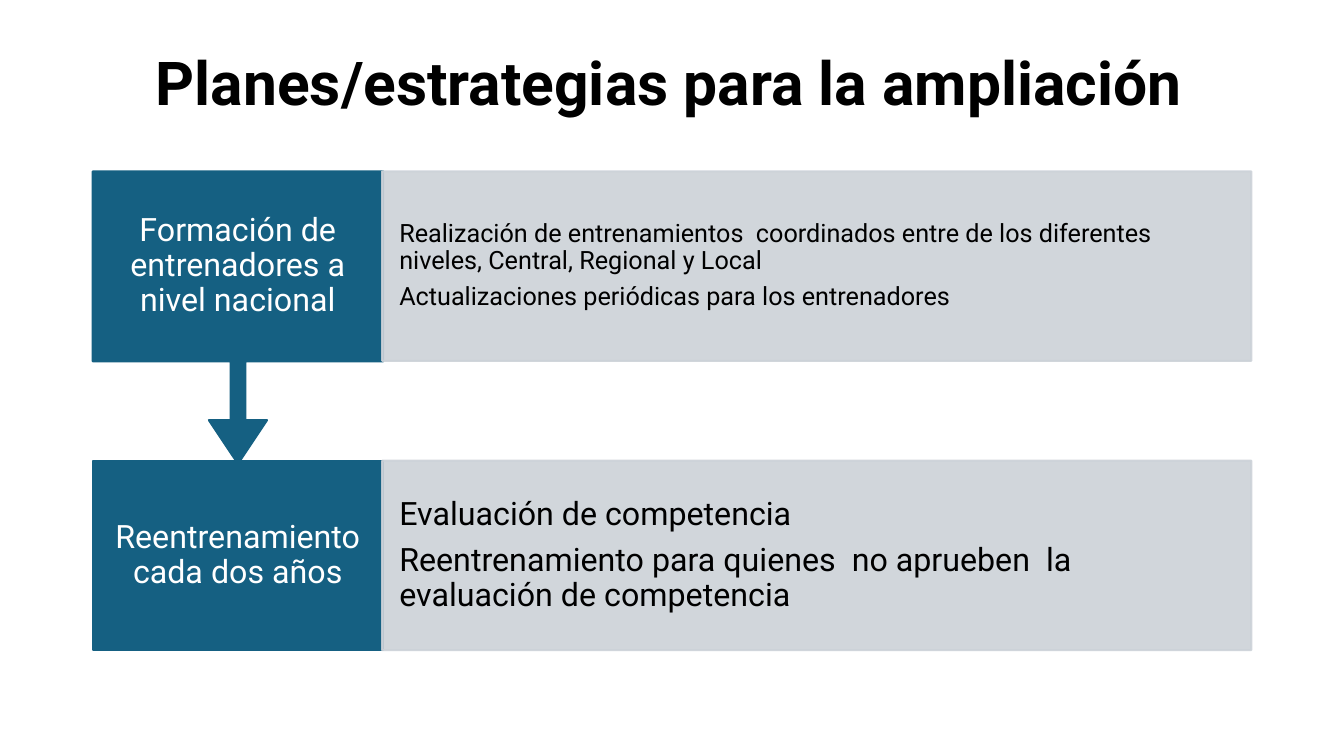
from lxml.etree import SubElement
from pptx import Presentation
from pptx.dml.color import RGBColor
from pptx.enum.shapes import MSO_SHAPE as Preset
from pptx.enum.text import MSO_ANCHOR as Anchor, PP_ALIGN as Align
from pptx.oxml.ns import qn
from pptx.util import Inches, Pt

BLUE, GREY, WHITE, BLACK = "156082", "CCD2D8", "FFFFFF", "000000"
LEFT, LABEL_WIDTH, PANEL_WIDTH = 0.92, 2.88, 8.62
PANEL_LEFT = 3.79
ROW_TOP, ROW_PITCH, ROW_HEIGHT = 1.7, 2.87, 1.88
CALLOUT_HEIGHT = 2.9


def paint(shape, color, opacity=100):
    """Give fill and outline one colour, with the same opacity."""
    shape.shadow.inherit = False
    shape.fill.solid()
    shape.line.width = Pt(1.5)
    for fill in (shape.fill, shape.line.fill):
        fill.solid()
        fill.fore_color.rgb = RGBColor.from_string(color)
    if opacity < 100:
        for tint in shape._element.spPr.iter(qn("a:srgbClr")):
            SubElement(tint, qn("a:alpha"), val=str(opacity * 1000))


def write(shape, lines, size, color, align, inset, bold=False, after=0.35):
    """Fill a shape with paragraphs; space after is a share of the size."""
    frame = shape.text_frame
    frame.word_wrap = True
    frame.vertical_anchor = Anchor.MIDDLE
    frame.margin_left = frame.margin_right = Inches(inset[0])
    frame.margin_top = frame.margin_bottom = Inches(inset[1])
    frame.text = "\n".join(lines)
    for para in frame.paragraphs:
        para.alignment = align
        para.line_spacing = 0.9
        para.space_before = Pt(0)
        para.space_after = Pt(round(size * after, 1))
        for span in para.runs:
            span.font.name = "Roboto"
            span.font.size = Pt(size)
            span.font.bold = bold
            span.font.color.rgb = RGBColor.from_string(color)


deck = Presentation()
deck.slide_width, deck.slide_height = Inches(13.33), Inches(7.5)
page = deck.slides.add_slide(deck.slide_layouts[6])
shapes = page.shapes

# Title
title = shapes.add_textbox(Inches(0.81), Inches(0.23), Inches(11.5), Inches(1.24))
write(title, [" Planes/estrategias para la ampliación"], 43.2, BLACK,
      Align.CENTER, (0.1, 0.05), bold=True, after=0)

# Steps: label, details, size of the details, inset of the details
steps = [
    ("Formación de entrenadores a nivel nacional",
     ["Realización de entrenamientos  coordinados entre de los diferentes "
      "niveles, Central, Regional y Local",
      "Actualizaciones periódicas para los entrenadores"],
     18, (0.17, 0.25)),
    ("Reentrenamiento cada dos años",
     ["Evaluación de competencia",
      "Reentrenamiento para quienes  no aprueben  la evaluación de competencia"],
     23, (0.17, 0.32)),
]

# The last step lies at the back, so that the arrow ends on top of it
for row, (label, details, size, inset) in reversed(list(enumerate(steps))):
    top = Inches(ROW_TOP + row * ROW_PITCH)
    label_area = Inches(LEFT), top, Inches(LABEL_WIDTH), Inches(ROW_HEIGHT)

    # Label block, with an arrow down to the next step if there is one
    if row < len(steps) - 1:
        callout = shapes.add_shape(Preset.UP_ARROW_CALLOUT, *label_area[:3],
                                   Inches(CALLOUT_HEIGHT))
        callout.rotation = 180
        for index, share in enumerate((0.05, 0.1, 0.15, 0.65)):
            callout.adjustments[index] = share
        paint(callout, BLUE)
        label_box = shapes.add_textbox(*label_area)
    else:
        label_box = shapes.add_shape(Preset.RECTANGLE, *label_area)
        paint(label_box, BLUE)
    write(label_box, [label], 23, WHITE, Align.CENTER, (0.2, 0.18))

    # Details panel
    panel = shapes.add_shape(Preset.RECTANGLE, Inches(PANEL_LEFT), top,
                             Inches(PANEL_WIDTH), Inches(ROW_HEIGHT))
    paint(panel, GREY, opacity=90)
    write(panel, details, size, BLACK, Align.LEFT, inset)

deck.save("out.pptx")
